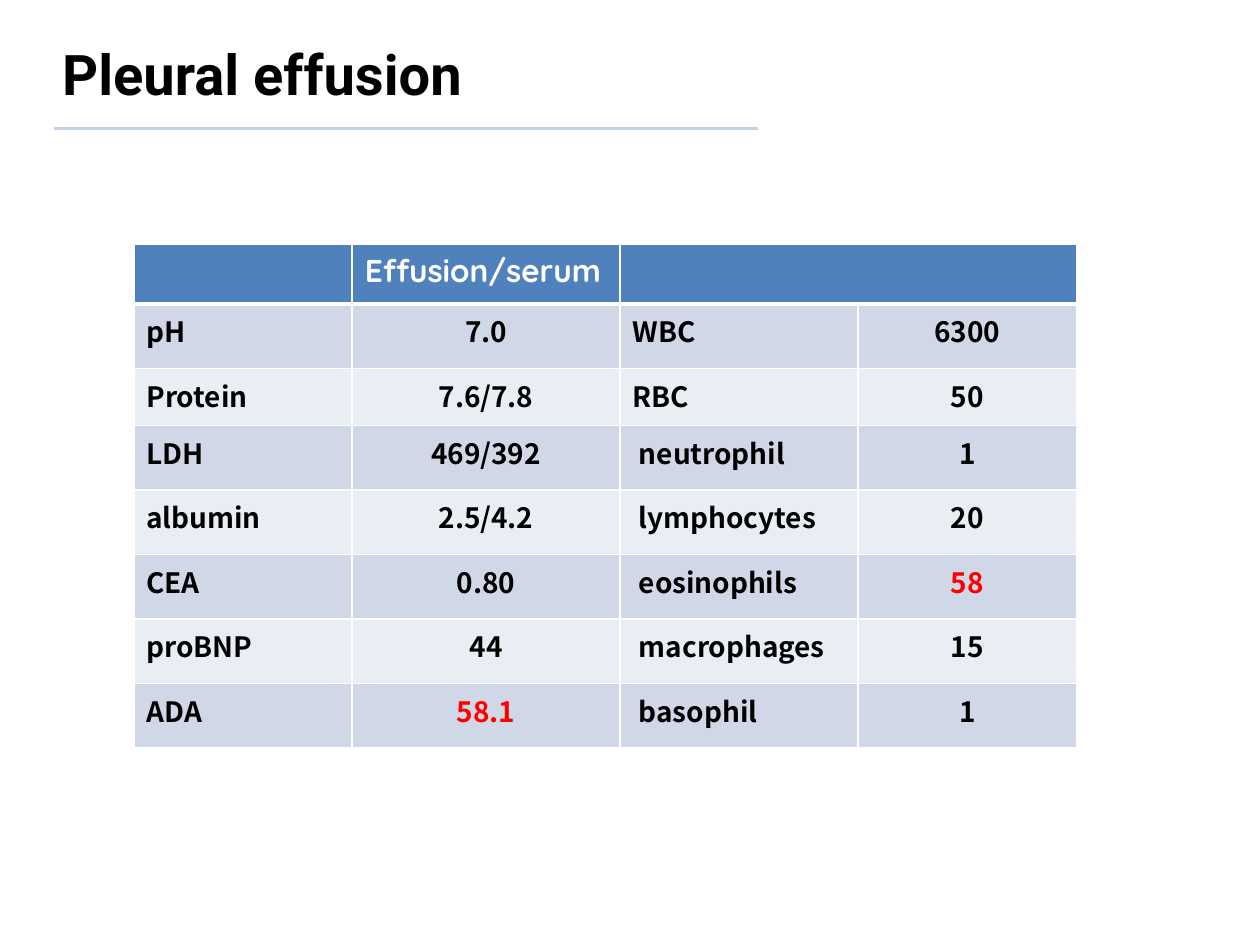
import dataclasses

import pptx
import pptx.dml.color
import pptx.enum.shapes
import pptx.enum.text
import pptx.oxml
import pptx.oxml.ns
import pptx.util

Cm = pptx.util.Cm
Pt = pptx.util.Pt
ALIGN = pptx.enum.text.PP_ALIGN


@dataclasses.dataclass(frozen=True)
class Theme:
    ink: str = "000000"
    white: str = "FFFFFF"
    alert: str = "FF0000"
    rule: str = "C2D1ED"
    head: str = "4F81BD"
    bands: tuple = ("D0D8E8", "E9EDF4")
    title: tuple = ("Roboto", 32)
    label: tuple = ("Quicksand", 18)
    body: tuple = ("Noto Sans CJK KR", 16)


THEME = Theme()
COLS = (4.4, 5.4, 4.8, 4.4)
ROWS = (1.2, 1.3, 1.15) + (1.3,) * 5
HEAD = ("", "Effusion/serum", "", "")
DATA = (
    ("pH", "7.0", "WBC", "6300"),
    ("Protein", "7.6/7.8", "RBC", "50"),
    ("LDH", "469/392", "neutrophil", "1"),
    ("albumin", "2.5/4.2", "lymphocytes", "20"),
    ("CEA", "0.80", "eosinophils", "58"),
    ("proBNP", "44", "macrophages", "15"),
    ("ADA", "58.1", "basophil", "1"),
)
HIGH = {"58", "58.1"}  # abnormal results
COUNTS = {"WBC", "RBC"}  # the other cell types are indented


def rgb(code):
    return pptx.dml.color.RGBColor.from_string(code)


def style(frame, face, color, align=ALIGN.LEFT):
    para = frame.paragraphs[0]
    para.alignment = align
    for run in para.runs:
        font = run.font
        font.name, font.size = face[0], Pt(face[1])
        font.bold = True
        font.color.rgb = rgb(color)


def add_title(slide, text):
    title = slide.shapes.title
    title.left, title.top = Cm(1), Cm(0.58)
    title.width, title.height = Cm(14.48), Cm(1.78)
    frame = title.text_frame
    frame.text = text
    frame.word_wrap = True
    frame.vertical_anchor = pptx.enum.text.MSO_ANCHOR.MIDDLE
    style(frame, THEME.title, THEME.ink)


def add_rule(slide):
    kind = pptx.enum.shapes.MSO_CONNECTOR.STRAIGHT
    line = slide.shapes.add_connector(kind, Cm(1.09), Cm(2.59), Cm(15.29), Cm(2.59))
    line.line.color.rgb = rgb(THEME.rule)
    line.line.width = Pt(2.25)
    props = line._element.spPr
    props.append(props.makeelement(pptx.oxml.ns.qn("a:effectLst"), {}))


def add_edges(cell, top, bottom):
    props = cell._tc.get_or_add_tcPr()
    widths = {"lnL": 1, "lnR": 1, "lnT": top, "lnB": bottom}
    for spot, (tag, width) in enumerate(widths.items()):
        edge = pptx.oxml.parse_xml(
            f'<a:{tag} {pptx.oxml.ns.nsdecls("a")} w="{Pt(width)}">'
            f'<a:solidFill><a:srgbClr val="{THEME.white}"/></a:solidFill></a:{tag}>'
        )
        props.insert(spot, edge)  # edges come before the fill


def fill_cell(cell, text, row, col):
    cell.text = text
    cell.fill.solid()
    if row == 0:
        cell.fill.fore_color.rgb = rgb(THEME.head)
        style(cell.text_frame, THEME.label, THEME.white)
    else:
        cell.fill.fore_color.rgb = rgb(THEME.bands[(row - 1) % 2])
        color = THEME.alert if text in HIGH else THEME.ink
        align = ALIGN.CENTER if col % 2 else ALIGN.LEFT
        style(cell.text_frame, THEME.body, color, align)
    if row and col == 2 and text not in COUNTS:
        cell.margin_left = Cm(0.38)
    add_edges(cell, 3 if row == 1 else 1, 3 if row == 0 else 1)


def add_grid(slide):
    frame = slide.shapes.add_table(
        len(ROWS), len(COLS), Cm(2.7), Cm(4.93), Cm(sum(COLS)), Cm(sum(ROWS))
    )
    table = frame.table
    for col, width in zip(table.columns, COLS):
        col.width = Cm(width)
    for row, height in zip(table.rows, ROWS):
        row.height = Cm(height)
    for r, line in enumerate((HEAD,) + DATA):
        for c, text in enumerate(line):
            fill_cell(table.cell(r, c), text, r, c)
    table.cell(0, 2).merge(table.cell(0, 3))


def main():
    deck = pptx.Presentation()
    deck.slide_width, deck.slide_height = Cm(25.4), Cm(19.05)
    slide = deck.slides.add_slide(deck.slide_layouts[5])

    # Heading
    add_rule(slide)
    add_title(slide, "Pleural effusion")

    # Laboratory results
    add_grid(slide)

    deck.save("out.pptx")


if __name__ == "__main__":
    main()
